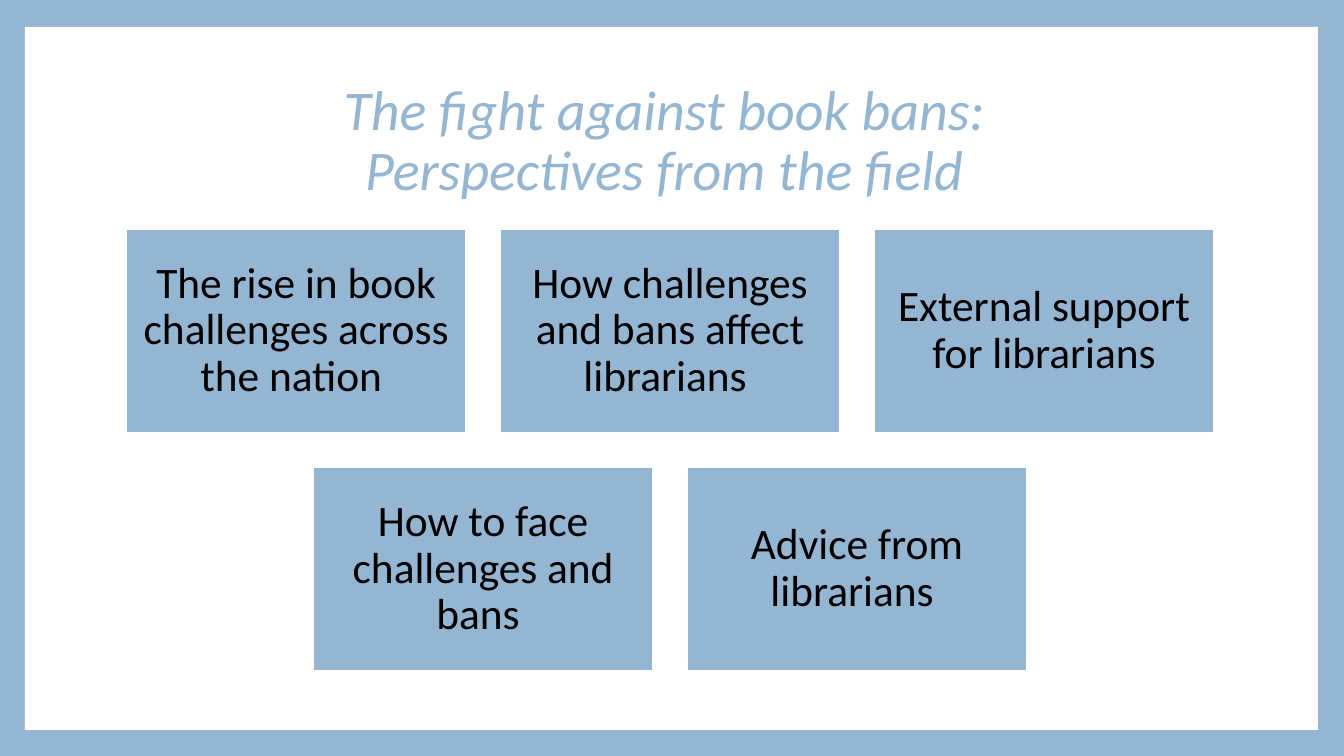
from pptx import Presentation
from pptx.dml.color import RGBColor
from pptx.enum.shapes import MSO_SHAPE
from pptx.enum.text import MSO_ANCHOR, MSO_AUTO_SIZE, PP_ALIGN
from pptx.util import Emu, Pt

PIXELS_PER_INCH = 100.8
BLUE, WHITE, BLACK = "94B6D2", "FFFFFF", "000000"
TITLE_LINES = ["The fight against book bans: ", "Perspectives from the field "]
TOPIC_ROWS = [
    [
        "The rise in book challenges across the nation ",
        "How challenges and bans affect librarians ",
        "External support for librarians",
    ],
    ["How to face challenges and bans ", "Advice from librarians "],
]
CENTER, TOP, BOX_WIDTH, BOX_HEIGHT, GAP = 670, 229, 340, 204, 34


def px(length):
    """Turn a length in pixels into EMU."""
    return Emu(round(length * 914400 / PIXELS_PER_INCH))


def color(value):
    """Turn a hex string into a colour."""
    return RGBColor.from_string(value)


def set_attributes(target, values):
    """Set every attribute named in a dict of format values."""
    for name, value in values.items():
        setattr(target, name, value)


def place(shape, left, top, width, height):
    """Move and size a shape, in pixels."""
    names = ("left", "top", "width", "height")
    set_attributes(shape, dict(zip(names, map(px, (left, top, width, height)))))


def write_text(shape, lines, size, text_color, margin, italic=False):
    """Write centred lines into a shape as one paragraph."""
    frame = shape.text_frame
    sides = ("left", "top", "right", "bottom")
    set_attributes(frame, {f"margin_{side}": px(margin) for side in sides})
    set_attributes(frame, {
        "word_wrap": True,
        "auto_size": MSO_AUTO_SIZE.NONE,
        "vertical_anchor": MSO_ANCHOR.MIDDLE,
    })
    paragraph = frame.paragraphs[0]
    set_attributes(paragraph, {"alignment": PP_ALIGN.CENTER, "line_spacing": 0.9})
    for index, line in enumerate(lines):
        if index:
            paragraph.add_line_break()
        run = paragraph.add_run()
        run.text = line
        set_attributes(run.font, {"name": "Calibri", "size": Pt(size), "italic": italic})
        run.font.color.rgb = color(text_color)


def add_box(slide, left, top, width, height, fill):
    """Add a plain filled rectangle."""
    box = slide.shapes.add_shape(MSO_SHAPE.RECTANGLE, 0, 0, 0, 0)
    place(box, left, top, width, height)
    box.shadow.inherit = False
    box.fill.solid()
    box.fill.fore_color.rgb = color(fill)
    box.line.fill.background()
    return box


def add_topic(slide, text, left, top):
    """Add a blue topic box with a white outline."""
    box = add_box(slide, left, top, BOX_WIDTH, BOX_HEIGHT, BLUE)
    box.line.color.rgb = color(WHITE)
    box.line.width = Pt(1.5)
    write_text(box, [text], 31, BLACK, 13)


def add_title(slide):
    """Fill the title placeholder and move it to the top of the panel."""
    title = slide.shapes.title
    place(title, 126, 68, 1089, 149)
    write_text(title, TITLE_LINES, 40, BLUE, 5, italic=True)


def add_topic_rows(slide):
    """Lay out the topic rows, each centred on the same axis."""
    for row_index, topics in enumerate(TOPIC_ROWS):
        row_width = len(topics) * (BOX_WIDTH + GAP) - GAP
        top = TOP + row_index * (BOX_HEIGHT + GAP)
        for column, topic in enumerate(topics):
            left = CENTER - row_width // 2 + column * (BOX_WIDTH + GAP)
            add_topic(slide, topic, left, top)


def main():
    """Build the slide and save it."""
    presentation = Presentation()
    set_attributes(presentation, {"slide_width": px(1344), "slide_height": px(756)})
    slide = presentation.slides.add_slide(presentation.slide_layouts[5])
    slide.background.fill.solid()
    slide.background.fill.fore_color.rgb = color(BLUE)
    panel = add_box(slide, 25, 27, 1293, 703, WHITE)
    slide.shapes.title.element.addprevious(panel.element)
    add_title(slide)
    add_topic_rows(slide)
    presentation.save("out.pptx")


if __name__ == "__main__":
    main()
